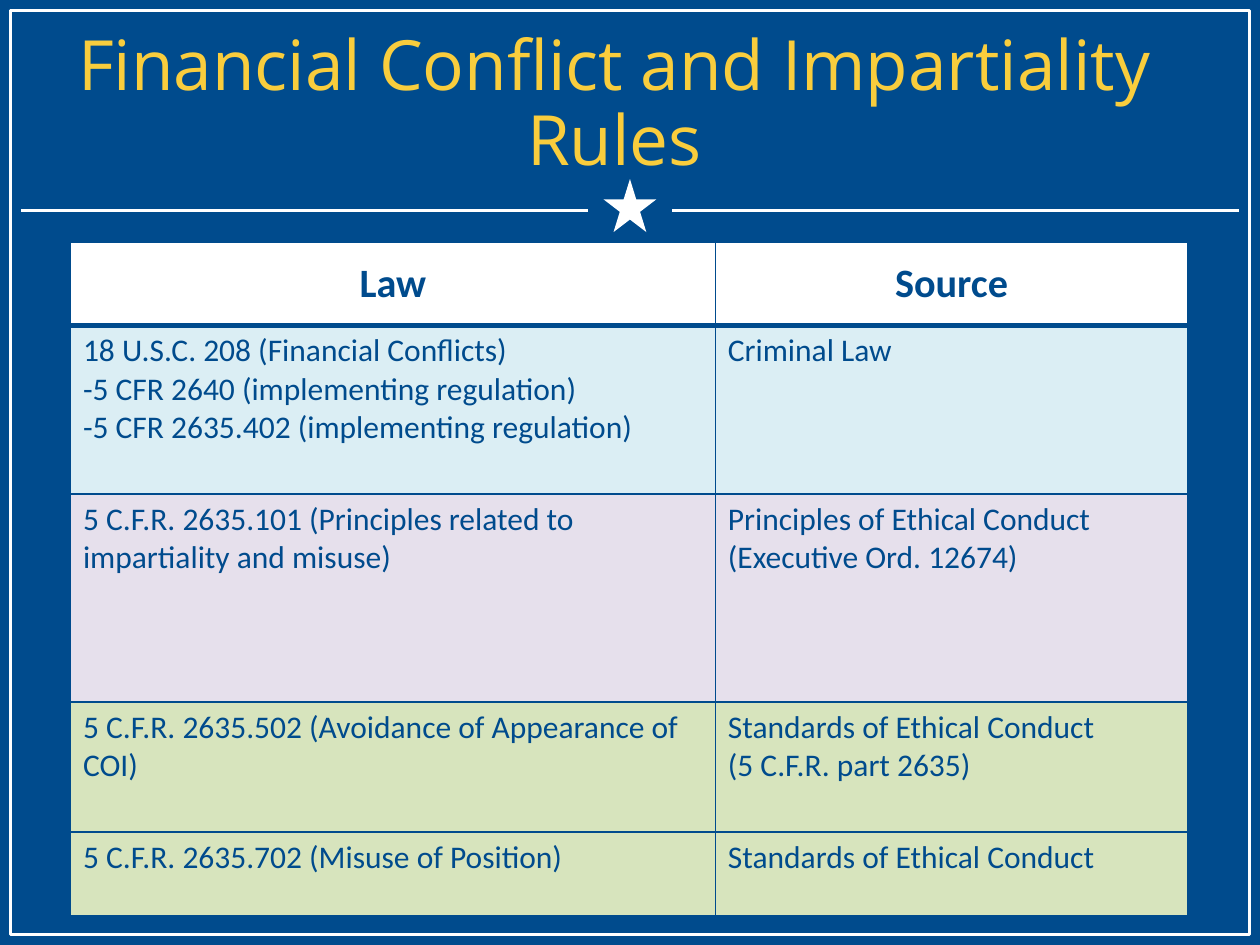
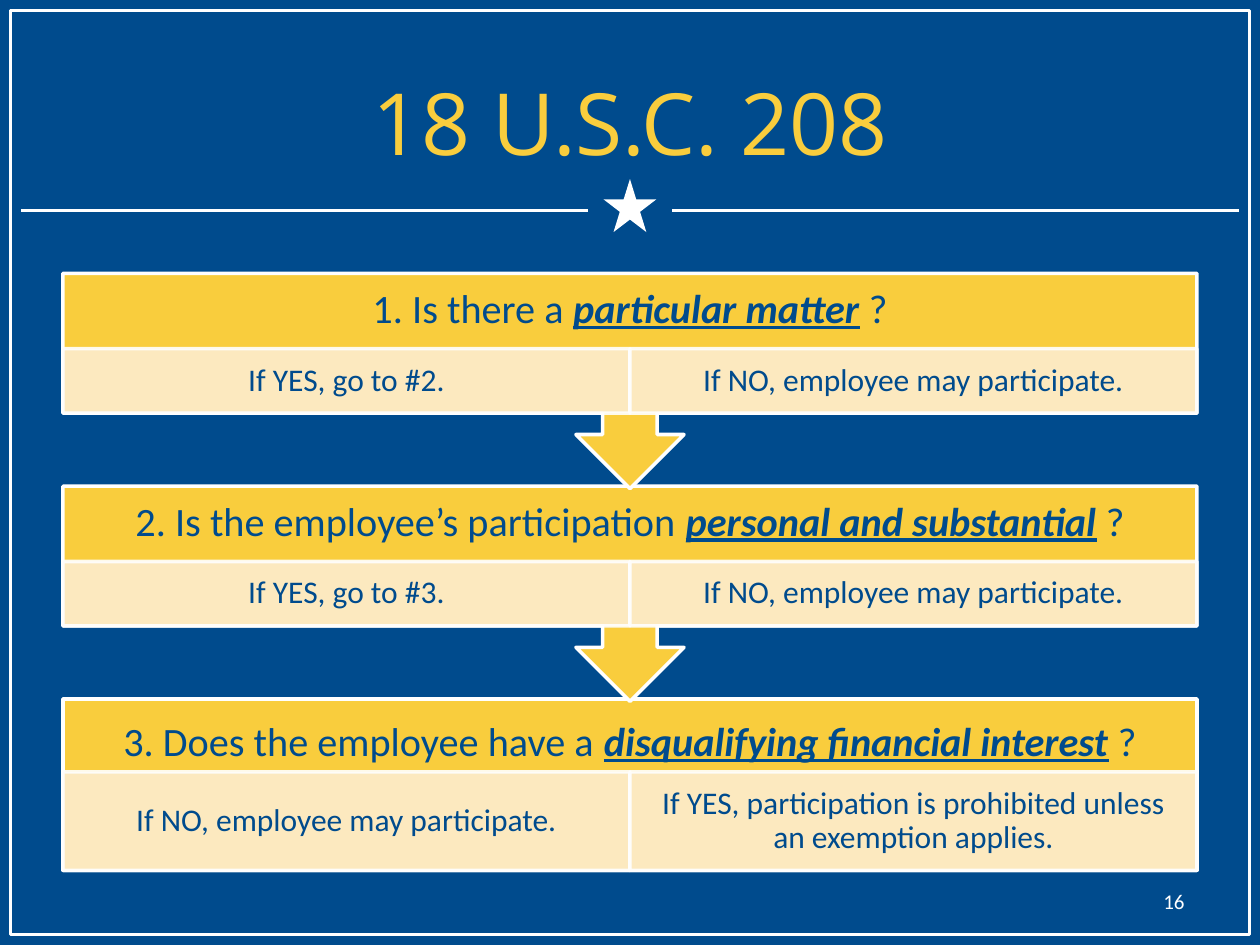
from lxml.etree import SubElement
from pptx import Presentation
from pptx.dml.color import RGBColor
from pptx.enum.shapes import MSO_CONNECTOR, MSO_SHAPE
from pptx.enum.text import MSO_ANCHOR, MSO_AUTO_SIZE, PP_ALIGN
from pptx.oxml.ns import qn
from pptx.util import Cm, Pt

# Content
LAW_TITLE = "Financial Conflict and Impartiality Rules"
LAW_HEADER = ("Law", "Source")
STANDARDS = "Standards of Ethical Conduct"
LAW_ROWS = [
    (["18 U.S.C. 208 (Financial Conflicts)",
      "-5 CFR 2640 (implementing regulation)",
      "-5 CFR 2635.402 (implementing regulation)"],
     ["Criminal Law"]),
    (["5 C.F.R. 2635.101 (Principles related to impartiality and misuse)"],
     ["Principles of Ethical Conduct", "(Executive Ord. 12674)"]),
    (["5 C.F.R. 2635.502 (Avoidance of Appearance of COI)"],
     [STANDARDS, "(5 C.F.R. part 2635)"]),
    (["5 C.F.R. 2635.702 (Misuse of Position)"], [STANDARDS]),
]

STEPS_TITLE = "18 U.S.C. 208"
MAY_PARTICIPATE = "If NO, employee may participate."
STEPS = [  # question, emphasised words, two answers
    ("1. Is there a ", "particular matter",
     ("If YES, go to #2.", MAY_PARTICIPATE)),
    ("2. Is the employee’s participation ", "personal and substantial",
     ("If YES, go to #3.", MAY_PARTICIPATE)),
    ("3. Does the employee have a ", "disqualifying financial interest",
     (MAY_PARTICIPATE,
      "If YES, participation is prohibited unless an exemption applies.")),
]
PAGE_NUMBER = "16"

# Shared look
BLUE = RGBColor(0x00, 0x4B, 0x8D)
GOLD = RGBColor(0xF9, 0xCD, 0x3D)
CREAM = RGBColor(0xFD, 0xED, 0xCE)
WHITE = RGBColor(0xFF, 0xFF, 0xFF)
PALE_BLUE = RGBColor(0xDB, 0xEE, 0xF4)
PALE_PURPLE = RGBColor(0xE6, 0xE0, 0xEC)
PALE_GREEN = RGBColor(0xD7, 0xE4, 0xBD)
ROW_FILLS = [WHITE, PALE_BLUE, PALE_PURPLE, PALE_GREEN, PALE_GREEN]
BODY_FONT, TITLE_FONT = "Calibri", "Open Sans"
HEADING_SIZE, BODY_SIZE = 23, 18
SLIDE_WIDTH, SLIDE_HEIGHT = Cm(25.4), Cm(19.05)
CENTER = SLIDE_WIDTH // 2
LINE_WIDTH = Pt(2)

# Table measures
COLUMN_WIDTHS = [Cm(13), Cm(9.53)]
ROW_HEIGHTS = [Cm(1.68), Cm(3.4), Cm(4.19), Cm(2.62), Cm(1.7)]

# Step measures
STEP_LEFT, STEP_WIDTH = Cm(1.27), Cm(22.86)
STEP_TOP, STEP_PITCH = Cm(5.51), Cm(4.29)
NECK_HALF, NECK_DROP = Cm(0.55), Cm(0.43)
HEAD_HALF, TIP_DROP = Cm(1.09), Cm(1.52)


def style_paragraph(paragraph, size, color, font=BODY_FONT,
                    align=PP_ALIGN.CENTER, spacing=None):
    paragraph.alignment = align
    paragraph.line_spacing = spacing
    paragraph.font.name = font
    paragraph.font.size = Pt(size)
    paragraph.font.color.rgb = color


def style_shape(shape, fill=None, line=WHITE):
    shape.shadow.inherit = False
    if fill is None:
        shape.fill.background()
    else:
        shape.fill.solid()
        shape.fill.fore_color.rgb = fill
    if line is None:
        shape.line.fill.background()
    else:
        shape.line.color.rgb = line
        shape.line.width = LINE_WIDTH


def set_margins(text_frame, side, top, bottom):
    text_frame.margin_left = text_frame.margin_right = side
    text_frame.margin_top, text_frame.margin_bottom = top, bottom
    text_frame.word_wrap = True


def add_slide(presentation, title_text, title_box, title_size, spacing=None):
    """Add a slide with the background, frame, star divider and title."""
    slide = presentation.slides.add_slide(presentation.slide_layouts[5])
    slide.background.fill.solid()
    slide.background.fill.fore_color.rgb = BLUE

    # Star divider
    edge, gap, divider_y = Cm(0.42), Cm(0.85), Cm(4.24)
    for start, end in ((edge, CENTER - gap),
                       (CENTER + gap, SLIDE_WIDTH - edge)):
        divider = slide.shapes.add_connector(
            MSO_CONNECTOR.STRAIGHT, start, divider_y, end, divider_y)
        divider.line.color.rgb = WHITE
        divider.line.width = LINE_WIDTH
        SubElement(divider._element.spPr, qn("a:effectLst"))
    star_size = Cm(1.07)
    star = slide.shapes.add_shape(MSO_SHAPE.STAR_5_POINT, CENTER - star_size // 2,
                                  Cm(3.61), star_size, star_size)
    style_shape(star, WHITE, line=None)

    # Frame
    inset = Cm(0.21)
    frame = slide.shapes.add_shape(MSO_SHAPE.RECTANGLE, inset, inset,
                                   SLIDE_WIDTH - 2 * inset,
                                   SLIDE_HEIGHT - 2 * inset)
    style_shape(frame)

    # Title
    title = slide.shapes.title
    title.left, title.top, title.width, title.height = title_box
    text_frame = title.text_frame
    text_frame.text = title_text
    text_frame.auto_size = MSO_AUTO_SIZE.NONE
    text_frame.vertical_anchor = MSO_ANCHOR.MIDDLE
    style_paragraph(text_frame.paragraphs[0], title_size, GOLD, TITLE_FONT,
                    spacing=spacing)
    return slide


def set_borders(cell, top, bottom):
    properties = cell._tc.get_or_add_tcPr()
    for side, width in (("L", 1), ("R", 1), ("T", top), ("B", bottom)):
        line = SubElement(properties, qn(f"a:ln{side}"), w=str(Pt(width)))
        fill = SubElement(line, qn("a:solidFill"))
        SubElement(fill, qn("a:srgbClr"), val=str(BLUE))


def add_law_table(slide):
    rows = [tuple([label] for label in LAW_HEADER)] + LAW_ROWS
    table = slide.shapes.add_table(
        len(rows), len(LAW_HEADER), Cm(1.42), Cm(4.88),
        sum(COLUMN_WIDTHS), sum(ROW_HEIGHTS)).table
    table.first_row = table.horz_banding = False
    for column, width in zip(table.columns, COLUMN_WIDTHS):
        column.width = width
    for row_index, texts in enumerate(rows):
        table.rows[row_index].height = ROW_HEIGHTS[row_index]
        is_header = row_index == 0
        for column_index, lines in enumerate(texts):
            cell = table.cell(row_index, column_index)
            set_borders(cell, top=3 if row_index == 1 else 1,
                        bottom=3 if is_header else 1)
            cell.fill.solid()
            cell.fill.fore_color.rgb = ROW_FILLS[row_index]
            cell.text = "\n".join(lines)
            if is_header:
                cell.vertical_anchor = MSO_ANCHOR.MIDDLE
            for paragraph in cell.text_frame.paragraphs:
                style_paragraph(
                    paragraph, HEADING_SIZE if is_header else BODY_SIZE, BLUE,
                    align=PP_ALIGN.CENTER if is_header else PP_ALIGN.LEFT)
                paragraph.font.bold = is_header


def step_outline(top, bottom, has_arrow):
    """Corners of a step box, with a down arrow below it if asked for."""
    left, right = STEP_LEFT, STEP_LEFT + STEP_WIDTH
    arrow = [
        (CENTER + NECK_HALF, bottom),
        (CENTER + NECK_HALF, bottom + NECK_DROP),
        (CENTER + HEAD_HALF, bottom + NECK_DROP),
        (CENTER, bottom + TIP_DROP),
        (CENTER - HEAD_HALF, bottom + NECK_DROP),
        (CENTER - NECK_HALF, bottom + NECK_DROP),
        (CENTER - NECK_HALF, bottom),
    ]
    return ([(right, bottom)] + (arrow if has_arrow else [])
            + [(left, bottom), (left, top), (right, top)])


def add_answer(slide, text, left, top, height):
    answer = slide.shapes.add_shape(MSO_SHAPE.RECTANGLE, left, top,
                                    STEP_WIDTH // 2, height)
    style_shape(answer, CREAM)
    for color in answer._element.spPr.iter(qn("a:srgbClr")):
        SubElement(color, qn("a:alpha"), val="90000")
    text_frame = answer.text_frame
    text_frame.text = text
    text_frame.vertical_anchor = MSO_ANCHOR.MIDDLE
    set_margins(text_frame, Cm(0.35), Cm(0.06), Cm(0.06))
    style_paragraph(text_frame.paragraphs[0], BODY_SIZE, BLUE, spacing=0.9)


def add_step(slide, index):
    question, emphasis, answers = STEPS[index]
    is_last = index == len(STEPS) - 1
    top = STEP_TOP + index * STEP_PITCH
    answer_top = top + (Cm(1.47) if is_last else Cm(1.52))
    answer_height = Cm(1.99) if is_last else Cm(1.3)

    # Question box
    points = step_outline(top, answer_top + answer_height, not is_last)
    builder = slide.shapes.build_freeform(*points[0])
    builder.add_line_segments(points[1:], close=True)
    box = builder.convert_to_shape()
    style_shape(box, GOLD)
    text_frame = box.text_frame
    text_frame.vertical_anchor = MSO_ANCHOR.TOP if is_last else MSO_ANCHOR.MIDDLE
    set_margins(text_frame, Cm(0.46), Cm(0.46), Cm(1.75) if is_last else Cm(3.3))
    paragraph = text_frame.paragraphs[0]
    style_paragraph(paragraph, HEADING_SIZE, BLUE, spacing=0.9)
    for text in (question, emphasis, " ?"):
        run = paragraph.add_run()
        run.text = text
        if text == emphasis:
            run.font.bold = run.font.italic = run.font.underline = True

    # Answers
    for column, answer in enumerate(answers):
        add_answer(slide, answer, STEP_LEFT + column * STEP_WIDTH // 2,
                   answer_top, answer_height)


def add_page_number(slide):
    box = slide.shapes.add_textbox(Cm(18.21), Cm(17.65), Cm(5.92), Cm(1.02))
    text_frame = box.text_frame
    text_frame.word_wrap = True
    text_frame.vertical_anchor = MSO_ANCHOR.MIDDLE
    text_frame.text = PAGE_NUMBER
    style_paragraph(text_frame.paragraphs[0], 12, WHITE, align=PP_ALIGN.RIGHT)


def main():
    presentation = Presentation()
    presentation.slide_width = SLIDE_WIDTH
    presentation.slide_height = SLIDE_HEIGHT

    # Laws and their sources
    law_slide = add_slide(presentation, LAW_TITLE,
                          (Cm(0.64), Cm(0.43), Cm(23.5), Cm(3.18)), 39.6, 0.9)
    law_slide.shapes.title.text_frame.margin_top = Cm(0.33)
    add_law_table(law_slide)

    # Decision steps, last one first so that arrow tips lie on top
    steps_slide = add_slide(presentation, STEPS_TITLE,
                            (STEP_LEFT, Cm(0.86), STEP_WIDTH, Cm(3.18)), 49)
    add_page_number(steps_slide)
    for index in reversed(range(len(STEPS))):
        add_step(steps_slide, index)

    presentation.save("out.pptx")


if __name__ == "__main__":
    main()
